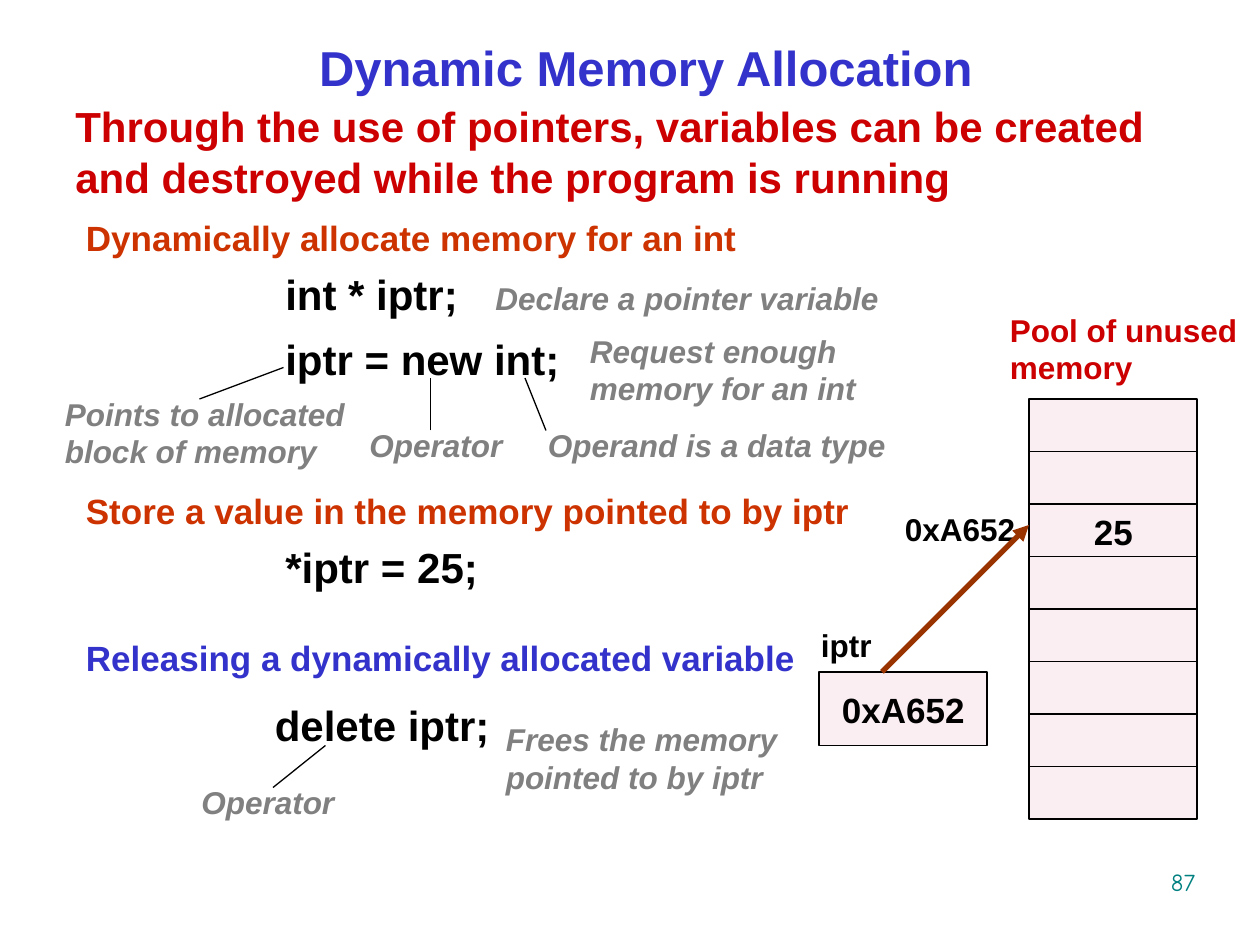
"""Builds a slide on dynamic memory allocation, laid out on a grid of 120 columns by 90 rows."""
import pptx
import pptx.dml.color
import pptx.enum.shapes
import pptx.enum.text
import pptx.util
from lxml import etree
from pptx.oxml.ns import qn

COLORS = {
    "black": "000000", "gray": "808080", "blue": "3333CC", "red": "CC0000",
    "orange": "CC3300", "brown": "993300", "teal": "008080", "pink": "FAEEF3",
}


class Deck:
    COLS, ROWS = 120, 90
    FONT = "Arial"

    def __init__(self, width, height):
        self.prs = pptx.Presentation()
        self.prs.slide_width = pptx.util.Inches(width)
        self.prs.slide_height = pptx.util.Inches(height)
        self.s = self.prs.slides.add_slide(self.prs.slide_layouts[6])

    def x(self, cols):
        return round(self.prs.slide_width * cols / self.COLS)

    def y(self, rows):
        return round(self.prs.slide_height * rows / self.ROWS)

    def color(self, name):
        return pptx.dml.color.RGBColor.from_string(COLORS[name])

    def text(self, text, col, row, cols, rows, size, color, bold=True,
             italic=False, align="LEFT", font=FONT, gap=0):
        sp = self.s.shapes.add_textbox(self.x(col), self.y(row), self.x(cols), self.y(rows))
        tf = sp.text_frame
        tf.word_wrap = True
        tf.text = text
        for i, p in enumerate(tf.paragraphs):
            p.alignment = getattr(pptx.enum.text.PP_ALIGN, align)
            p.space_before = pptx.util.Pt(gap if i else 0)
            for r in p.runs:
                r.font.name = font
                r.font.size = pptx.util.Pt(size)
                r.font.bold = bold
                r.font.italic = italic
                r.font.color.rgb = self.color(color)

    def heading(self, text, row, cols, color):
        self.text(text, 7, row, cols, 5.2, 20, color)

    def code(self, text, col, row, cols, rows=6):
        self.text(text, col, row, cols, rows, 24, "black", gap=8)

    def note(self, text, col, row, cols, rows=4.8):
        self.text(text, col, row, cols, rows, 18, "gray", italic=True)

    def label(self, text, col, row, cols, rows=4.8, size=18, color="black"):
        self.text(text, col, row, cols, rows, size, color)

    def box(self, col, row, cols, rows):
        sp = self.s.shapes.add_shape(
            pptx.enum.shapes.MSO_SHAPE.RECTANGLE,
            self.x(col), self.y(row), self.x(cols), self.y(rows))
        sp.shadow.inherit = False
        sp.fill.solid()
        sp.fill.fore_color.rgb = self.color("pink")
        sp.line.color.rgb = self.color("black")
        sp.line.width = pptx.util.Pt(0.75)

    def line(self, x1, y1, x2, y2, color="black", width=0.75, arrow=False):
        sp = self.s.shapes.add_connector(
            pptx.enum.shapes.MSO_CONNECTOR.STRAIGHT,
            self.x(x1), self.y(y1), self.x(x2), self.y(y2))
        sp.line.color.rgb = self.color(color)
        sp.line.width = pptx.util.Pt(width)
        if arrow:
            etree.SubElement(sp.line._get_or_add_ln(), qn("a:tailEnd"), type="triangle")
        etree.SubElement(sp._element.spPr, qn("a:effectLst"))

    def memory(self, col, row, cols, cells, step):
        self.box(col, row, cols, cells * step)
        for i in range(1, cells):
            self.line(col, row + i * step, col + cols, row + i * step)


def main():
    d = Deck(10, 7.5)
    d.text("87", 100, 82, 15, 6, 14, "teal", bold=False, align="RIGHT", font="Comic Neue")
    d.text("Dynamic Memory Allocation", 19, 3, 85, 6.8, 28, "blue", align="CENTER")
    d.text("Through the use of pointers, variables can be created and destroyed "
           "while the program is running", 6, 9, 109, 10.8, 24, "red")

    d.heading("Dynamically allocate memory for an int", 20, 81, "orange")
    d.code("int * iptr;\niptr = new int;", 26, 25, 31, 12.2)
    d.note("Declare a pointer variable", 46, 26, 42)
    d.note("Request enough memory for an int", 55, 31, 34, 8.4)
    d.note("Points to allocated block of memory", 5, 37, 31, 8.4)
    d.note("Operator", 34, 40, 19)
    d.note("Operand is a data type", 51, 40, 36)

    d.heading("Store a value in the memory pointed to by iptr", 46, 79, "orange")
    d.code("*iptr = 25;", 26, 51, 26)

    d.heading("Releasing a dynamically allocated variable", 60, 70, "blue")
    d.code("delete iptr;", 25, 66, 29)
    d.note("Frees the memory pointed to by iptr", 47, 68, 30, 8.4)
    d.note("Operator", 18, 74, 19)

    d.label("Pool of unused memory", 95, 29, 25, 8.4, color="red")
    d.memory(98, 38, 16, cells=8, step=5)
    d.label("25", 103, 48, 9, 5.2, size=20)
    d.label("0xA652", 85, 48, 13)
    d.label("iptr", 77, 59, 9)
    d.box(78, 64, 16, 7)
    d.label("0xA652", 79, 65, 16, 5.2, size=20)

    d.line(84, 64, 98, 50, "brown", 3, arrow=True)
    for ends in ((26, 75, 31, 71), (19, 38, 27, 35), (41, 41, 41, 36), (52, 41, 50, 36)):
        d.line(*ends)
    d.prs.save("out.pptx")


if __name__ == "__main__":
    main()
